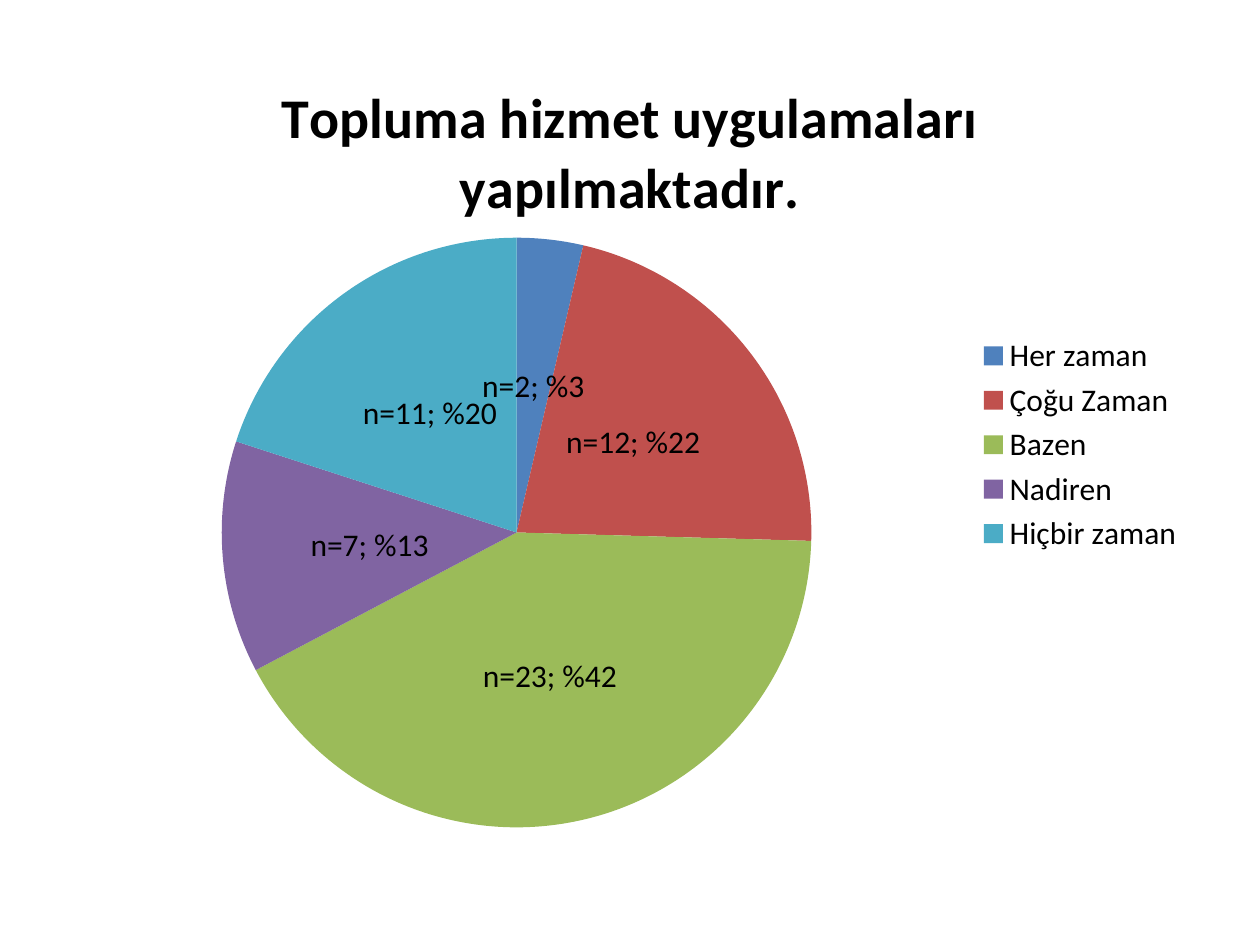
from dataclasses import dataclass

import pptx
import pptx.chart.data
import pptx.dml.color
import pptx.enum.chart
import pptx.oxml
import pptx.oxml.ns
import pptx.util

Inches = pptx.util.Inches


@dataclass(frozen=True)
class Theme:
    font: str = "Calibri"
    ink: str = "000000"
    paper: str = "FFFFFF"
    head: int = 32
    body: int = 18
    fills: tuple = ("4F81BD", "C0504D", "9BBB59", "8064A2", "4BACC6")


THEME = Theme()
TITLE = "Topluma hizmet uygulamaları yapılmaktadır."
# Answer, count, percent
ROWS = (
    ("Her zaman", 2, 3),
    ("Çoğu Zaman", 12, 22),
    ("Bazen", 23, 42),
    ("Nadiren", 7, 13),
    ("Hiçbir zaman", 11, 20),
)


def color(code):
    return pptx.dml.color.RGBColor.from_string(code)


def style(font, size, bold=False):
    font.name = THEME.font
    font.size = pptx.util.Pt(size)
    font.bold = bold
    font.color.rgb = color(THEME.ink)


def write(frame, text, size, bold=False):
    para = frame.paragraphs[0]
    style(para.font, size, bold)
    run = para.add_run()
    run.text = text
    style(run.font, size, bold)


def add_pie(slide):
    data = pptx.chart.data.CategoryChartData()
    data.categories = [name for name, _, _ in ROWS]
    data.add_series(TITLE, [count for _, count, _ in ROWS])
    frame = slide.shapes.add_chart(
        pptx.enum.chart.XL_CHART_TYPE.PIE,
        Inches(0.5), Inches(0.36), Inches(9), Inches(6.34), data)
    chart = frame.chart
    style(chart.font, THEME.body)
    return chart


def set_title(chart):
    chart.has_title = True
    chart.chart_title.include_in_layout = False
    write(chart.chart_title.text_frame, TITLE, THEME.head, True)


def set_legend(chart):
    chart.has_legend = True
    chart.legend.position = pptx.enum.chart.XL_LEGEND_POSITION.RIGHT
    chart.legend.include_in_layout = False
    style(chart.legend.font, THEME.body)


def set_slices(chart):
    plot = chart.plots[0]
    plot.vary_by_categories = True
    series = plot.series[0]
    center = pptx.enum.chart.XL_LABEL_POSITION.CENTER
    labels = series.data_labels
    labels.show_value = labels.show_percentage = True
    labels.position = center
    style(labels.font, THEME.body)
    for i, (_, count, share) in enumerate(ROWS):
        point = series.points[i]
        point.format.fill.solid()
        point.format.fill.fore_color.rgb = color(THEME.fills[i])
        label = point.data_label
        write(label.text_frame, f"n={count}; %{share}", THEME.body)
        label.position = center
    # Each label shows its percent as well as its value
    for flag in labels._element.iter(pptx.oxml.ns.qn("c:showPercent")):
        flag.set("val", "1")


def place_plot(chart, x, y, w, h):
    """Fix the pie's area, in fractions of the chart."""
    area = chart.plots[0]._element.getparent()
    for old in area.findall(pptx.oxml.ns.qn("c:layout")):
        area.remove(old)
    sizes = "".join(f'<c:{tag} val="{val}"/>'
                    for tag, val in zip("xywh", (x, y, w, h)))
    area.insert(0, pptx.oxml.parse_xml(
        f'<c:layout {pptx.oxml.ns.nsdecls("c")}><c:manualLayout>'
        '<c:layoutTarget val="inner"/>'
        '<c:xMode val="edge"/><c:yMode val="edge"/>'
        f'{sizes}</c:manualLayout></c:layout>'))


def main():
    deck = pptx.Presentation()
    deck.slide_width, deck.slide_height = Inches(10), Inches(7.5)
    # The heading belongs to the chart, so the layout is blank
    slide = deck.slides.add_slide(deck.slide_layouts[6])
    back = slide.background.fill
    back.solid()
    back.fore_color.rgb = color(THEME.paper)

    # Pie with heading, legend and labels
    chart = add_pie(slide)
    set_title(chart)
    set_legend(chart)
    set_slices(chart)
    place_plot(chart, 0.14, 0.24, 0.52, 0.74)
    deck.save("out.pptx")


if __name__ == "__main__":
    main()
